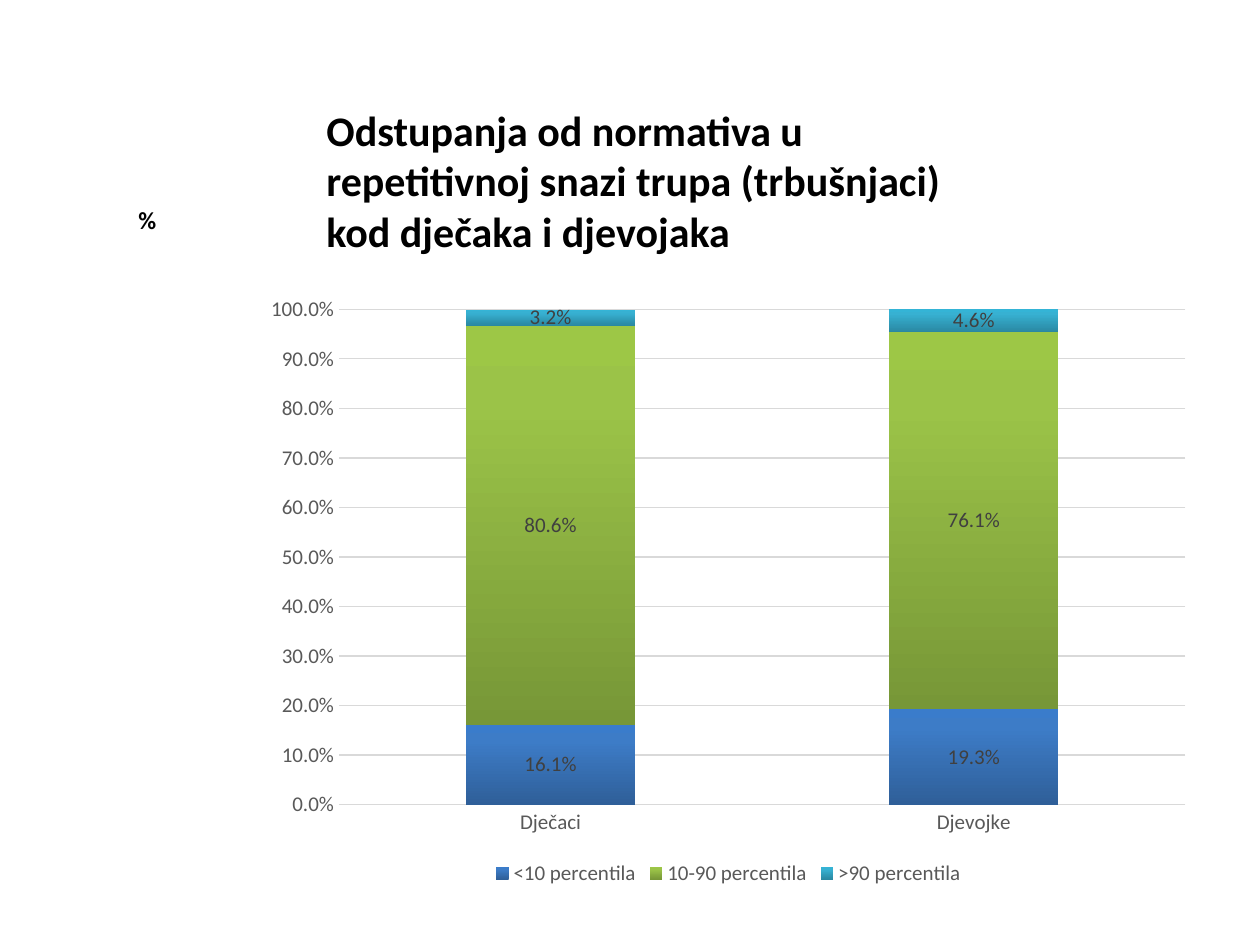
import copy
from dataclasses import dataclass

import pptx
import pptx.chart.data
import pptx.dml.color
import pptx.enum.chart
import pptx.enum.text
import pptx.oxml.ns
import pptx.util
from pptx.util import Inches


@dataclass(frozen=True)
class Theme:
    """Colours, font and type sizes of the slide."""
    font: str = "Calibri"
    ink: str = "000000"
    axis_text: str = "595959"
    label_text: str = "404040"
    grid: str = "D9D9D9"
    title_size: int = 24
    unit_size: int = 14
    chart_size: int = 12
    gradients: tuple = (
        ("2F5F99", "3D7CC7", "3A7CCB"),
        ("779737", "9BC348", "9DC746"),
        ("2A88A2", "37B1D2", "34B4D6"),
    )


THEME = Theme()
CATEGORIES = ("Dječaci", "Djevojke")
SERIES = (
    ("<10 percentila", (0.161, 0.193)),
    ("10-90 percentila", (0.806, 0.761)),
    (">90 percentila", (0.032, 0.046)),
)
PERCENT = "0.0%"


def rgb(value):
    """Turn a hex string into a colour."""
    return pptx.dml.color.RGBColor.from_string(value)


def style_font(font, size, color, bold=False):
    """Apply the theme typeface with a size, colour and weight."""
    font.name = THEME.font
    font.size = pptx.util.Pt(size)
    font.color.rgb = rgb(color)
    font.bold = bold


def style_line(line, width):
    """Give an axis or grid line the grid colour."""
    line.color.rgb = rgb(THEME.grid)
    line.width = pptx.util.Pt(width)


def fill_text(shape, box, text, size):
    """Place a shape and write one bold, left-aligned paragraph in it."""
    shape.left, shape.top, shape.width, shape.height = box
    frame = shape.text_frame
    frame.word_wrap = True
    frame.auto_size = pptx.enum.text.MSO_AUTO_SIZE.NONE
    frame.vertical_anchor = pptx.enum.text.MSO_ANCHOR.TOP
    frame.text = text
    para = frame.paragraphs[0]
    para.alignment = pptx.enum.text.PP_ALIGN.LEFT
    style_font(para.font, size, THEME.ink, bold=True)


def fill_gradient(series, colors):
    """Fill a series with three stops running from bottom to top."""
    fill = series.format.fill
    fill.gradient()
    fill.gradient_angle = 90
    stop_list = next(series._element.iter(pptx.oxml.ns.qn("a:gsLst")))
    stop_list.append(copy.deepcopy(stop_list[-1]))
    for stop, color, position in zip(fill.gradient_stops, colors, (0, 0.8, 1)):
        stop.color.rgb = rgb(color)
        stop.position = position


def style_axes(chart):
    """Format the category axis, the value axis and the grid."""
    for axis in (chart.category_axis, chart.value_axis):
        axis.major_tick_mark = pptx.enum.chart.XL_TICK_MARK.NONE
        axis.minor_tick_mark = pptx.enum.chart.XL_TICK_MARK.NONE
        style_font(axis.tick_labels.font, THEME.chart_size, THEME.axis_text)
    style_line(chart.category_axis.format.line, 1)
    values = chart.value_axis
    values.minimum_scale, values.maximum_scale, values.major_unit = 0, 1, 0.1
    values.tick_labels.number_format = PERCENT
    values.tick_labels.number_format_is_linked = False
    values.format.line.fill.background()
    values.has_major_gridlines = True
    style_line(values.major_gridlines.format.line, 0.75)


def add_percentile_chart(page, box):
    """Add the stacked columns of percentile shares."""
    data = pptx.chart.data.CategoryChartData(number_format=PERCENT)
    data.categories = CATEGORIES
    for name, shares in SERIES:
        data.add_series(name, shares)
    kind = pptx.enum.chart.XL_CHART_TYPE.COLUMN_STACKED
    chart = page.shapes.add_chart(kind, *box, data).chart
    style_font(chart.font, THEME.chart_size, THEME.axis_text)
    chart.has_title = False
    chart.has_legend = True
    chart.legend.position = pptx.enum.chart.XL_LEGEND_POSITION.BOTTOM
    chart.legend.include_in_layout = False
    style_font(chart.legend.font, THEME.chart_size, THEME.axis_text)
    style_axes(chart)
    plot = chart.plots[0]
    plot.gap_width, plot.overlap = 150, 100
    plot.vary_by_categories = False
    for series, colors in zip(plot.series, THEME.gradients):
        fill_gradient(series, colors)
        labels = series.data_labels
        labels.show_value = True
        labels.number_format = PERCENT
        labels.number_format_is_linked = False
        style_font(labels.font, THEME.chart_size, THEME.label_text)


def add_title(page, box):
    """Move and format the title placeholder."""
    text = ("Odstupanja od normativa u repetitivnoj snazi trupa "
            "(trbušnjaci) kod dječaka i djevojaka")
    fill_text(page.shapes.title, box, text, THEME.title_size)


def add_unit(page, box):
    """Add the unit of the value axis."""
    fill_text(page.shapes.add_textbox(*box), box, "%", THEME.unit_size)


def main():
    """Build the deck and save it."""
    deck = pptx.Presentation()
    deck.slide_width, deck.slide_height = Inches(10), Inches(7.5)
    page = deck.slides.add_slide(deck.slide_layouts.get_by_name("Title Only"))
    add_percentile_chart(
        page, (Inches(2), Inches(2.26), Inches(7.56), Inches(4.81)))
    add_title(page, (Inches(2.49), Inches(0.78), Inches(5.36), Inches(1.31)))
    add_unit(page, (Inches(1), Inches(1.58), Inches(1), Inches(0.34)))
    deck.save("out.pptx")


if __name__ == "__main__":
    main()
